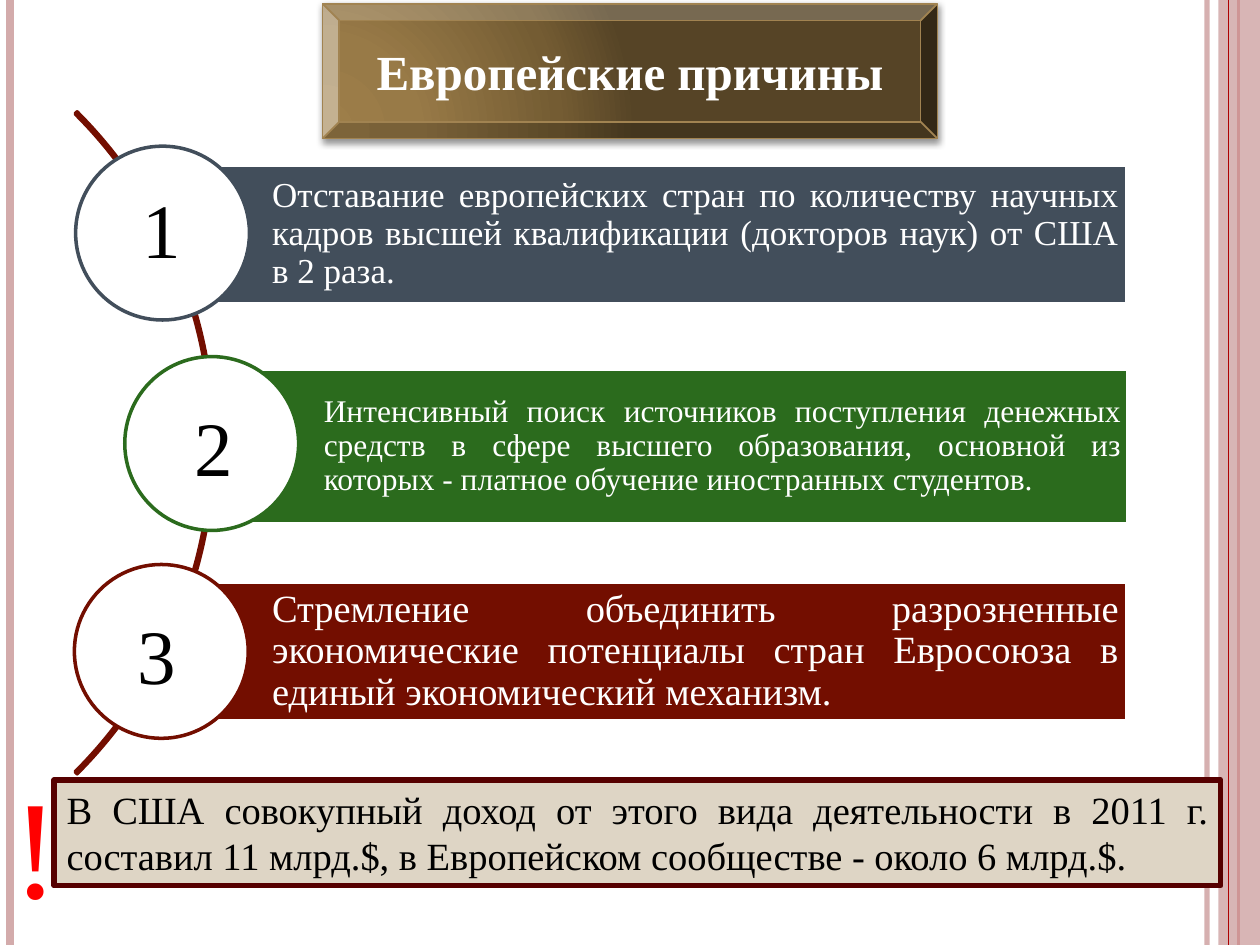
from dataclasses import dataclass

import pptx
import pptx.dml.color
import pptx.enum.shapes
import pptx.enum.text
import pptx.oxml
import pptx.oxml.ns
import pptx.util
from pptx.util import Inches

SHAPE = pptx.enum.shapes.MSO_SHAPE
ALIGN = pptx.enum.text.PP_ALIGN
ANCHOR = pptx.enum.text.MSO_ANCHOR
FONT = "Times New Roman"
CIRCLE_SIZE = 1.38
COLORS = {
    "white": "FFFFFF", "black": "000000", "red": "FF0000", "pink": "D3ABAB",
    "crimson": "AD0101", "gold": "A18351", "slate": "424E5B", "green": "2B6B1D",
    "maroon": "730E00", "wine": "560000", "sand": "DED5C5",
}
TITLE_STOPS = [(0, "9D7E49"), (30, "987A47"), (75, "745C33"), (100, "564426")]


@dataclass
class Stripe:
    x: float
    color: str
    width: float
    opacity: int = 100


@dataclass
class Reason:
    text: str
    color: str
    size: float
    bar: tuple[float, float, float, float]
    inset: float
    circle: tuple[float, float]
    number: tuple[float, float, float, float]


BACK_STRIPES = [Stripe(9.58, "pink", 3, 93), Stripe(0.08, "pink", 4.5), Stripe(9.83, "crimson", 1.5)]
FRONT_STRIPE = Stripe(9.75, "crimson", 0.75)
REASONS = [
    Reason("Отставание европейских стран по количеству научных кадров высшей квалификации "
           "(докторов наук) от США в 2 раза.",
           "slate", 20, (1.28, 1.31, 7.66, 1.1), 0.06, (0.6, 1.16), (0.89, 1.39, 0.79, 0.84)),
    Reason("Интенсивный поиск источников поступления денежных средств в сфере высшего "
           "образования, основной из которых - платное обучение иностранных студентов.",
           "green", 18, (1.69, 2.93, 7.26, 1.23), 0.05, (0.99, 2.83), (1.38, 3.12, 0.63, 0.84)),
    Reason("Стремление объединить разрозненные экономические потенциалы стран Евросоюза "
           "в единый экономический механизм.",
           "maroon", 22, (1.28, 4.62, 7.66, 1.1), 0.06, (0.59, 4.48), (0.89, 4.77, 0.71, 0.84)),
]


def rgb(name: str) -> pptx.dml.color.RGBColor:
    return pptx.dml.color.RGBColor.from_string(COLORS[name])


def element(xml: str):
    return pptx.oxml.parse_xml(xml.replace(" ", f" {pptx.oxml.ns.nsdecls('a')} ", 1))


def set_opacity(owner, percent: int) -> None:
    color = owner.find(".//" + pptx.oxml.ns.qn("a:srgbClr"))
    color.append(element(f'<a:alpha val="{percent * 1000}"/>'))


def add_stripe(slide, stripe: Stripe) -> None:
    line = slide.shapes.add_connector(
        pptx.enum.shapes.MSO_CONNECTOR.STRAIGHT,
        Inches(stripe.x), 0, Inches(stripe.x), Inches(7.5))
    line.line.color.rgb = rgb(stripe.color)
    line.line.width = pptx.util.Pt(stripe.width)
    properties = line._element.spPr
    if stripe.opacity < 100:
        set_opacity(properties, stripe.opacity)
    properties.append(element("<a:effectLst />"))


def add_figure(slide, kind, box, fill=None, line=None, width: float = 2):
    figure = slide.shapes.add_shape(kind, *map(Inches, box))
    figure.shadow.inherit = False
    if fill:
        figure.fill.solid()
        figure.fill.fore_color.rgb = rgb(fill)
    else:
        figure.fill.background()
    if line:
        figure.line.color.rgb = rgb(line)
        figure.line.width = pptx.util.Pt(width)
    else:
        figure.line.fill.background()
    return figure


def write(shape, text: str, *, size: float, color: str = "black", align=ALIGN.CENTER,
          anchor=ANCHOR.TOP, bold: bool = False, insets=(0.1, 0.05, 0.1, 0.05),
          spacing: float = 1.0) -> None:
    frame = shape.text_frame
    frame.word_wrap = True
    frame.vertical_anchor = anchor
    (frame.margin_left, frame.margin_top,
     frame.margin_right, frame.margin_bottom) = map(Inches, insets)
    paragraph = frame.paragraphs[0]
    paragraph.alignment = align
    paragraph.line_spacing = spacing
    run = paragraph.add_run()
    run.text = text
    run.font.name = FONT
    run.font.size = pptx.util.Pt(size)
    run.font.bold = bold
    run.font.color.rgb = rgb(color)


def add_label(slide, text: str, box, **text_format) -> None:
    write(slide.shapes.add_textbox(*map(Inches, box)), text, **text_format)


def add_title(slide) -> None:
    title = add_figure(slide, SHAPE.BEVEL, (2.56, 0.03, 4.88, 1.07), line="gold", width=1)
    title.fill.gradient()
    properties = title._element.spPr
    stops = "".join(f'<a:gs pos="{position * 1000}"><a:srgbClr val="{color}"/></a:gs>'
                    for position, color in TITLE_STOPS)
    properties.replace(
        properties.find(pptx.oxml.ns.qn("a:gradFill")),
        element(f'<a:gradFill rotWithShape="1"><a:gsLst>{stops}</a:gsLst><a:path path="circle">'
                '<a:fillToRect l="5000" t="100000" r="120000" b="10000"/></a:path></a:gradFill>'))
    properties.find(pptx.oxml.ns.qn("a:effectLst")).append(element(
        f'<a:outerShdw blurRad="{pptx.util.Pt(4)}" dist="{pptx.util.Pt(1.6)}" dir="5400000" '
        'rotWithShape="0"><a:srgbClr val="000000"><a:alpha val="42000"/></a:srgbClr>'
        '</a:outerShdw>'))
    write(title, "Европейские причины", size=28, color="white", bold=True, anchor=ANCHOR.MIDDLE)


def add_reason(slide, reason: Reason) -> None:
    bar = add_figure(slide, SHAPE.RECTANGLE, reason.bar, reason.color, "white")
    write(bar, reason.text, size=reason.size, color="white", align=ALIGN.JUSTIFY,
          anchor=ANCHOR.MIDDLE, insets=(0.88, *[reason.inset] * 3), spacing=0.9)
    add_figure(slide, SHAPE.OVAL, (*reason.circle, CIRCLE_SIZE, CIRCLE_SIZE),
               "white", reason.color)


def main() -> None:
    deck = pptx.Presentation()
    deck.slide_width, deck.slide_height = Inches(10), Inches(7.5)
    slide = deck.slides.add_slide(deck.slide_layouts[6])

    for stripe in BACK_STRIPES:
        add_stripe(slide, stripe)
    edge = add_figure(slide, SHAPE.RECTANGLE, (9.67, 0, 0.33, 7.5), "pink")
    set_opacity(edge._element.spPr, 87)
    add_stripe(slide, FRONT_STRIPE)
    add_title(slide)

    arc = add_figure(slide, SHAPE.BLOCK_ARC, (-5.73, -0.2, 7.43, 7.43), line="maroon")
    for index, value in enumerate((189, 27, 0.003)):
        arc.adjustments[index] = value
    for reason in REASONS:
        add_reason(slide, reason)
    for number, reason in enumerate(REASONS, 1):
        add_label(slide, str(number), reason.number, size=44)

    income = add_figure(slide, SHAPE.RECTANGLE, (0.43, 6.19, 9.26, 0.84), "sand", "wine", 3)
    write(income, "В США совокупный доход от этого вида деятельности в 2011 г. составил "
          "11 млрд.$, в Европейском сообществе - около 6 млрд.$.",
          size=22, align=ALIGN.JUSTIFY)
    add_label(slide, "!", (0, 5.97, 0.43, 1.45), size=80, color="red")
    deck.save("out.pptx")


if __name__ == "__main__":
    main()
